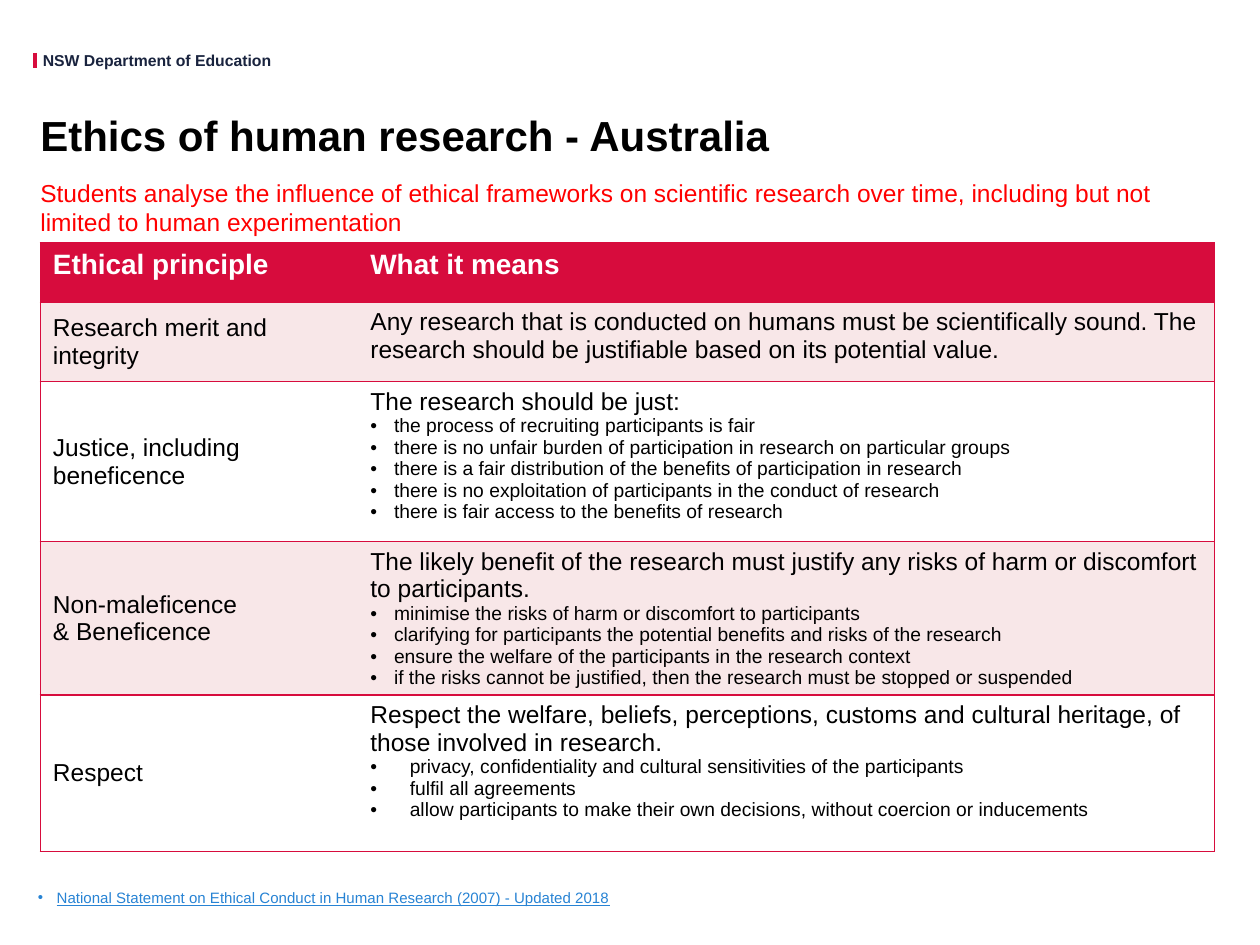
from dataclasses import dataclass

from lxml.etree import SubElement
from pptx import Presentation
from pptx.dml.color import RGBColor
from pptx.enum.shapes import MSO_CONNECTOR as Connector
from pptx.enum.text import MSO_ANCHOR as Anchor, MSO_AUTO_SIZE as AutoSize, PP_ALIGN as Align
from pptx.oxml.ns import qn
from pptx.util import Pt

COLORS = {
    "crimson": "D70C3D",
    "blush": "F8E7E8",
    "white": "FFFFFF",
    "black": "000000",
    "navy": "19233E",
    "red": "FF0000",
    "link": "2783D4",
}
FONT = "Arial"
COLUMN_WIDTHS = (181.44, 489.6)
ROW_HEIGHTS = (33.84, 45.36, 91.44, 84.96, 89.28)
TABLE_LEFT, TABLE_TOP = 23.04, 138.96


@dataclass(frozen=True)
class Style:
    size: float
    color: str = "black"
    bold: bool = False
    underline: bool = False
    indent: float = 0
    bullet: bool = False
    line_spacing: float = 1.0
    space_after: float = 0


@dataclass(frozen=True)
class Principle:
    name: tuple[str, ...]
    meaning: str
    points: tuple[str, ...] = ()
    indent: float = 13.5


TITLE = Style(24, bold=True, line_spacing=0.9)
INTRO = Style(14, "red", space_after=4.5)
SOURCE = Style(8.6, "link", underline=True, indent=10.8, bullet=True,
               line_spacing=1.3, space_after=4.5)
DEPARTMENT = Style(9, "navy", bold=True)
HEADING = Style(16, "white", bold=True)
CELL = Style(14)

PRINCIPLES = (
    Principle(
        ("Research merit and integrity",),
        "Any research that is conducted on humans must be scientifically sound. "
        "The research should be justifiable based on its potential value.",
    ),
    Principle(
        ("Justice, including beneficence",),
        "The research should be just:",
        (
            "the process of recruiting participants is fair",
            "there is no unfair burden of participation in research on particular groups",
            "there is a fair distribution of the benefits of participation in research",
            "there is no exploitation of participants in the conduct of research",
            "there is fair access to the benefits of research",
        ),
    ),
    Principle(
        ("Non-maleficence", "& Beneficence"),
        "The likely benefit of the research must justify any risks of harm or "
        "discomfort to participants.",
        (
            "minimise the risks of harm or discomfort to participants",
            "clarifying for participants the potential benefits and risks of the research",
            "ensure the welfare of the participants in the research context",
            "if the risks cannot be justified, then the research must be stopped or suspended",
        ),
    ),
    Principle(
        ("Respect",),
        "Respect the welfare, beliefs, perceptions, customs and cultural heritage, "
        "of those involved in research.",
        (
            "privacy, confidentiality and cultural sensitivities of the participants",
            "fulfil all agreements",
            "allow participants to make their own decisions, without coercion or inducements",
        ),
        indent=22.5,
    ),
)


def rgb(name: str) -> RGBColor:
    return RGBColor.from_string(COLORS[name])


def write(frame, lines: list[tuple[str, Style]]) -> None:
    for index, (text, style) in enumerate(lines):
        para = frame.add_paragraph() if index else frame.paragraphs[0]
        para.text = text
        properties = para._p.get_or_add_pPr()
        properties.set("marL", str(Pt(style.indent)))
        properties.set("indent", str(-Pt(style.indent)))
        if style.bullet:
            SubElement(properties, qn("a:buFont"), typeface=FONT)
            SubElement(properties, qn("a:buChar"), char="•")
        else:
            SubElement(properties, qn("a:buNone"))
        para.alignment = Align.LEFT
        para.line_spacing = style.line_spacing
        para.space_before = Pt(0)
        para.space_after = Pt(style.space_after)
        font = para.font
        font.name, font.size = FONT, Pt(style.size)
        font.bold, font.underline = style.bold, style.underline
        font.color.rgb = rgb(style.color)


def fill_box(box, place: tuple[float, ...], margins: tuple[float, ...],
             text: str, style: Style, anchor: Anchor = Anchor.TOP, wrap: bool = True) -> None:
    box.left, box.top, box.width, box.height = map(Pt, place)
    frame = box.text_frame
    frame.margin_left, frame.margin_top, frame.margin_right, frame.margin_bottom = map(Pt, margins)
    frame.word_wrap = wrap
    frame.auto_size = AutoSize.NONE
    frame.vertical_anchor = anchor
    write(frame, [(text, style)])


def set_borders(cell, outer_side: str) -> None:
    properties = cell._tc.get_or_add_tcPr()
    for position, side in enumerate("LRTB"):
        border = SubElement(properties, qn(f"a:ln{side}"), w=str(Pt(1)))
        if side in ("T", "B", outer_side):
            paint = SubElement(border, qn("a:solidFill"))
            SubElement(paint, qn("a:srgbClr"), val=COLORS["crimson"])
        else:
            SubElement(border, qn("a:noFill"))
        properties.insert(position, border)


def fill_row(table, row: int, fill: str, contents: list[list[tuple[str, Style]]]) -> None:
    for column, lines in enumerate(contents):
        cell = table.cell(row, column)
        cell.fill.solid()
        cell.fill.fore_color.rgb = rgb(fill)
        cell.vertical_anchor = Anchor.MIDDLE if row and not column else Anchor.TOP
        set_borders(cell, "LR"[column])
        write(cell.text_frame, lines)


def add_principles(slide) -> None:
    table = slide.shapes.add_table(
        len(ROW_HEIGHTS), len(COLUMN_WIDTHS), Pt(TABLE_LEFT), Pt(TABLE_TOP),
        Pt(sum(COLUMN_WIDTHS)), Pt(sum(ROW_HEIGHTS))).table
    table.first_row = table.horz_banding = False
    for column, width in zip(table.columns, COLUMN_WIDTHS):
        column.width = Pt(width)
    for row, height in zip(table.rows, ROW_HEIGHTS):
        row.height = Pt(height)
    fill_row(table, 0, "crimson", [[("Ethical principle", HEADING)], [("What it means", HEADING)]])
    for row, principle in enumerate(PRINCIPLES, start=1):
        point = Style(11, indent=principle.indent, bullet=True)
        fill_row(table, row, "blush" if row % 2 else "white", [
            [(line, CELL) for line in principle.name],
            [(principle.meaning, CELL)] + [(text, point) for text in principle.points],
        ])


def add_department(slide) -> None:
    bar = slide.shapes.add_connector(Connector.STRAIGHT, Pt(20.16), Pt(30.24), Pt(20.16), Pt(38.88))
    bar.line.color.rgb = rgb("crimson")
    bar.line.width = Pt(2.5)
    SubElement(bar._element.spPr, qn("a:effectLst"))
    label = slide.shapes.add_textbox(0, 0, 0, 0)
    fill_box(label, (24.48, 28.8, 131.76, 10.8), (0, 0, 0, 0),
             "NSW Department of Education", DEPARTMENT, wrap=False)


def main() -> None:
    deck = Presentation()
    deck.slide_width, deck.slide_height = Pt(720), Pt(540)
    slide = deck.slides.add_slide(deck.slide_layouts.get_by_name("Two Content"))
    for placeholder in list(slide.placeholders)[3:]:
        placeholder.element.getparent().remove(placeholder.element)
    title, intro, source = slide.placeholders
    add_department(slide)
    fill_box(source, (14.4, 501.12, 679.68, 21.6), (7.2, 3.6, 7.2, 3.6),
             "National Statement on Ethical Conduct in Human Research (2007) - Updated 2018", SOURCE)
    fill_box(intro, (23.04, 97.92, 679.68, 40.32), (0, 3.6, 7.2, 3.6),
             "Students analyse the influence of ethical frameworks on scientific research "
             "over time, including but not limited to human experimentation", INTRO)
    fill_box(title, (23.04, 59.04, 678.96, 39.6), (0, 0, 0, 0),
             "Ethics of human research - Australia", TITLE, Anchor.MIDDLE)
    add_principles(slide)
    deck.save("out.pptx")


if __name__ == "__main__":
    main()
